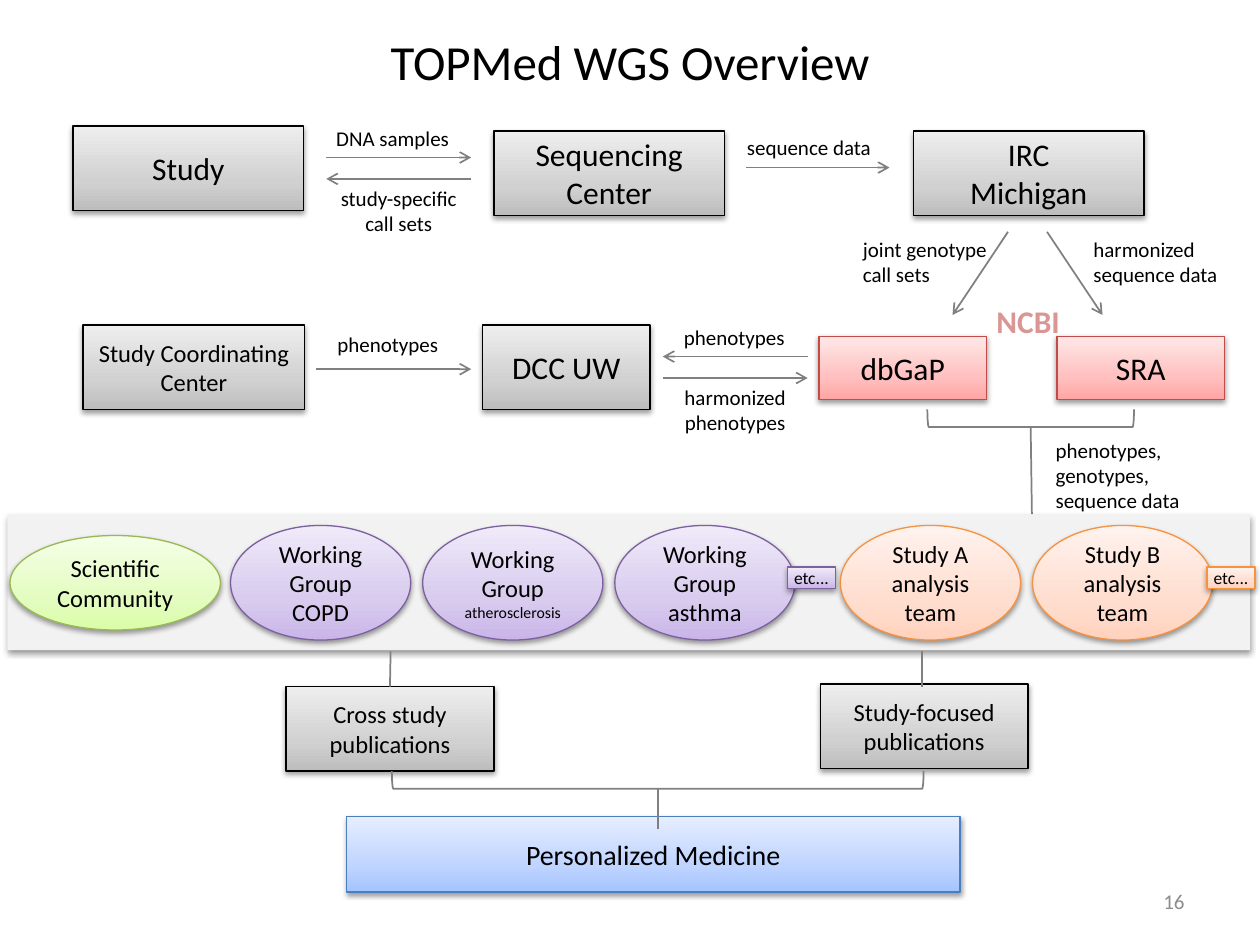
from copy import deepcopy
from dataclasses import dataclass

from lxml import etree
from pptx import Presentation
from pptx.dml.color import RGBColor
from pptx.enum.shapes import MSO_CONNECTOR, MSO_SHAPE
from pptx.enum.text import MSO_ANCHOR, MSO_AUTO_SIZE, PP_ALIGN
from pptx.oxml.ns import qn
from pptx.util import Inches, Pt

RECT, OVAL, BRACKET = MSO_SHAPE.RECTANGLE, MSO_SHAPE.OVAL, MSO_SHAPE.RIGHT_BRACKET
STRAIGHT = MSO_CONNECTOR.STRAIGHT
LEFT, CENTER, RIGHT = PP_ALIGN.LEFT, PP_ALIGN.CENTER, PP_ALIGN.RIGHT
MIDDLE, TOP = MSO_ANCHOR.MIDDLE, MSO_ANCHOR.TOP
FIT_SHAPE = MSO_AUTO_SIZE.SHAPE_TO_FIT_TEXT
TOP_SIDE = 0


@dataclass(frozen=True)
class Palette:
    line: str
    stops: tuple[str, str, str]  # bottom to top


@dataclass(frozen=True)
class Theme:
    font: str = "Calibri"
    text: str = "000000"
    connector: str = "808080"
    panel: str = "F2F2F2"
    ncbi: str = "D99694"
    number: str = "8C8C8C"
    title: float = 28
    large: float = 18
    medium: float = 16
    body: float = 14
    label: float = 12
    tag: float = 10
    small: float = 9
    gray: Palette = Palette("000000", ("BDBDBD", "D1D1D1", "EEEEEE"))
    red: Palette = Palette("BF4C48", ("FFA6A5", "FFC0BF", "FFE7E7"))
    green: Palette = Palette("98B955", ("DAFDA7", "E4FCC2", "F5FFE7"))
    purple: Palette = Palette("7D60A0", ("C9B5E8", "D8CBEE", "F0EAF9"))
    orange: Palette = Palette("F69240", ("FFD2BD", "FFDED0", "FFF2ED"))
    blue: Palette = Palette("4B7EBC", ("A4C4FF", "BFD4FF", "E6EEFF"))


T = Theme()


@dataclass(frozen=True)
class Node:
    text: str
    at: tuple[float, float, float, float]
    palette: Palette = T.gray
    size: float = T.large
    kind: MSO_SHAPE = RECT
    last_size: float | None = None
    inset: bool = True


@dataclass(frozen=True)
class Label:
    text: str
    at: tuple[float, float, float, float]
    align: PP_ALIGN = LEFT
    size: float = T.label
    color: str = T.text
    bold: bool = False
    anchor: MSO_ANCHOR = TOP


@dataclass(frozen=True)
class Link:
    start: tuple[float, float]
    end: tuple[float, float]
    arrow: bool = True
    target: str = ""  # node whose top side the line ends at


WIDE, DCC, PUB = 1.83, 1.33, 1.65
BOX_H = 0.67
GROUP_W, GROUP_H, GROUP_TOP, PITCH = 1.43, 0.91, 4.17, 1.525


def group(text: str, first: float, col: int, palette: Palette, last: float | None = None) -> Node:
    at = (first + col * PITCH, GROUP_TOP, GROUP_W, GROUP_H)
    return Node(text, at, palette, T.body, OVAL, last)


def etc_tag(left: float, palette: Palette) -> Node:
    return Node("etc...", (left, 4.5, 0.38, 0.17), palette, T.tag, inset=False)


NODES = [
    Node("Study", (0.58, 1, WIDE, BOX_H)),
    Node("Study Coordinating Center", (0.66, 2.58, 1.76, BOX_H), size=T.body),
    Node("Sequencing Center", (3.92, 1.04, WIDE, BOX_H)),
    Node("IRC\nMichigan", (7.25, 1.04, WIDE, BOX_H)),
    Node("DCC UW", (3.83, 2.58, DCC, BOX_H)),
    Node("dbGaP", (6.5, 2.67, DCC, 0.5), T.red),
    Node("SRA", (8.39, 2.67, DCC, 0.5), T.red),
    Node("Scientific Community", (0.08, 4.25, 1.67, 0.75), T.green, T.body, OVAL),
    group("Working Group\nCOPD", 1.83, 0, T.purple),
    group("Working Group\natherosclerosis", 1.83, 1, T.purple, T.small),
    group("Working Group\nasthma", 1.83, 2, T.purple),
    group("Study A analysis team", 6.67, 0, T.orange),
    group("Study B analysis team", 6.67, 1, T.orange),
    etc_tag(6.25, T.purple),
    etc_tag(9.58, T.orange),
    Node("Cross study publications", (2.27, 5.45, PUB, BOX_H), size=T.body),
    Node("Study-focused publications", (6.51, 5.43, PUB, BOX_H), size=T.body),
    Node("Personalized Medicine", (2.75, 6.48, 4.87, 0.6), T.blue, T.medium),
]

LABELS = [
    Label("DNA samples", (2.57, 0.95, 1.33, 0.3)),
    Label("study-specific call sets", (2.5, 1.42, 1.33, 0.5), CENTER),
    Label("sequence data", (5.83, 1.02, 1.33, 0.3)),
    Label("joint genotype call sets", (6.75, 1.83, 1.25, 0.5)),
    Label("harmonized sequence data", (8.58, 1.83, 1.33, 0.5)),
    Label("NCBI", (7.81, 2.35, 1.35, 0.4), size=T.large, color=T.ncbi, bold=True),
    Label("phenotypes", (2.58, 2.58, 1.33, 0.3)),
    Label("phenotypes", (5.33, 2.53, 1.33, 0.3)),
    Label("harmonized phenotypes", (5.17, 3, 1.33, 0.5), CENTER),
    Label("phenotypes,\ngenotypes,\nsequence data", (8.28, 3.42, 1.33, 0.71)),
    Label("16", (7.17, 6.95, 2.33, 0.4), RIGHT, color=T.number, anchor=MIDDLE),
]

LINKS = [
    Link((2.59, 1.25), (3.74, 1.25)),
    Link((3.74, 1.42), (2.59, 1.42)),
    Link((5.92, 1.33), (7.06, 1.33)),
    Link((8, 1.84), (7.56, 2.5)),
    Link((8.31, 1.84), (8.75, 2.5)),
    Link((2.51, 2.93), (3.74, 2.93)),
    Link((6.41, 2.83), (5.26, 2.83)),
    Link((5.26, 3), (6.41, 3)),
    Link((8.18, 3.39), (8.19, 4.08), False),
    Link((3.1, 5.17), (3.1, 5.45), False, "Cross study publications"),
    Link((7.32, 5.17), (7.32, 5.45), False),
    Link((5.22, 6.26), (5.22, 6.58), False),
]

BRACKETS = [(8.11, 2.5, 0.14, 1.64), (5.15, 4.08, 0.14, 4.22)]


def rgb(color: str) -> RGBColor:
    return RGBColor.from_string(color)


def write(tf, text: str, size: float, align=CENTER, color=T.text, bold=False, anchor=MIDDLE) -> None:
    tf.text = text
    tf.word_wrap = True
    tf.vertical_anchor = anchor
    for p in tf.paragraphs:
        p.alignment = align
        p.font.name, p.font.size, p.font.bold = T.font, Pt(size), bold
        p.font.color.rgb = rgb(color)


def add_shadow(s) -> None:
    s.shadow.inherit = False
    effects = s._element.spPr.find(qn("a:effectLst"))
    shadow = etree.SubElement(effects, qn("a:outerShdw"), blurRad="40000", dist="20000",
                              dir="5400000", rotWithShape="0")
    color = etree.SubElement(shadow, qn("a:srgbClr"), val="000000")
    etree.SubElement(color, qn("a:alpha"), val="38000")


def fill_gradient(s, colors: tuple[str, str, str]) -> None:
    s.fill.gradient()
    s.fill.gradient_angle = 90
    stops = s._element.spPr.find(".//" + qn("a:gsLst"))
    stops.append(deepcopy(stops[0]))
    for stop, position, color in zip(s.fill.gradient_stops, (0, 0.35, 1), colors):
        stop.position = position
        stop.color.rgb = rgb(color)


def add_node(shapes, node: Node):
    s = shapes.add_shape(node.kind, *map(Inches, node.at))
    fill_gradient(s, node.palette.stops)
    s.line.color.rgb, s.line.width = rgb(node.palette.line), Pt(0.75)
    add_shadow(s)
    tf = s.text_frame
    write(tf, node.text, node.size)
    if node.last_size:
        tf.paragraphs[-1].font.size = Pt(node.last_size)
    if not node.inset:
        tf.margin_left = tf.margin_right = tf.margin_top = tf.margin_bottom = 0
    return s


def add_label(shapes, label: Label) -> None:
    tf = shapes.add_textbox(*map(Inches, label.at)).text_frame
    write(tf, label.text, label.size, label.align, label.color, label.bold, label.anchor)
    if label.anchor == TOP:
        tf.auto_size = FIT_SHAPE


def add_link(shapes, link: Link, nodes: dict) -> None:
    s = shapes.add_connector(STRAIGHT, *map(Inches, link.start + link.end))
    if link.target:
        s.end_connect(nodes[link.target], TOP_SIDE)
    s.line.color.rgb, s.line.width = rgb(T.connector), Pt(1)
    if link.arrow:
        etree.SubElement(s.line._get_or_add_ln(), qn("a:tailEnd"), type="arrow")
    etree.SubElement(s._element.spPr, qn("a:effectLst"))


def add_bracket(shapes, at: tuple[float, float, float, float]) -> None:
    s = shapes.add_shape(BRACKET, *map(Inches, at))
    s.rotation = 90
    s.fill.background()
    s.line.color.rgb, s.line.width = rgb(T.connector), Pt(1)
    s.shadow.inherit = False


def main() -> None:
    prs = Presentation()
    prs.slide_width, prs.slide_height = Inches(10), Inches(7.5)
    shapes = prs.slides.add_slide(prs.slide_layouts[5]).shapes

    # Title
    title = shapes.title
    title.left, title.top, title.width, title.height = map(Inches, (0.5, 0.17, 9, 0.62))
    write(title.text_frame, "TOPMed WGS Overview", T.title)

    # Panel behind the user groups
    panel = shapes.add_shape(RECT, *map(Inches, (0.06, 4.08, 9.86, 1.08)))
    panel.fill.solid()
    panel.fill.fore_color.rgb = rgb(T.panel)
    panel.line.fill.background()
    add_shadow(panel)

    # Boxes, then the flows between them, then the wording
    nodes = {node.text: add_node(shapes, node) for node in NODES}
    for at in BRACKETS:
        add_bracket(shapes, at)
    for link in LINKS:
        add_link(shapes, link, nodes)
    for label in LABELS:
        add_label(shapes, label)

    prs.save("out.pptx")


if __name__ == "__main__":
    main()
